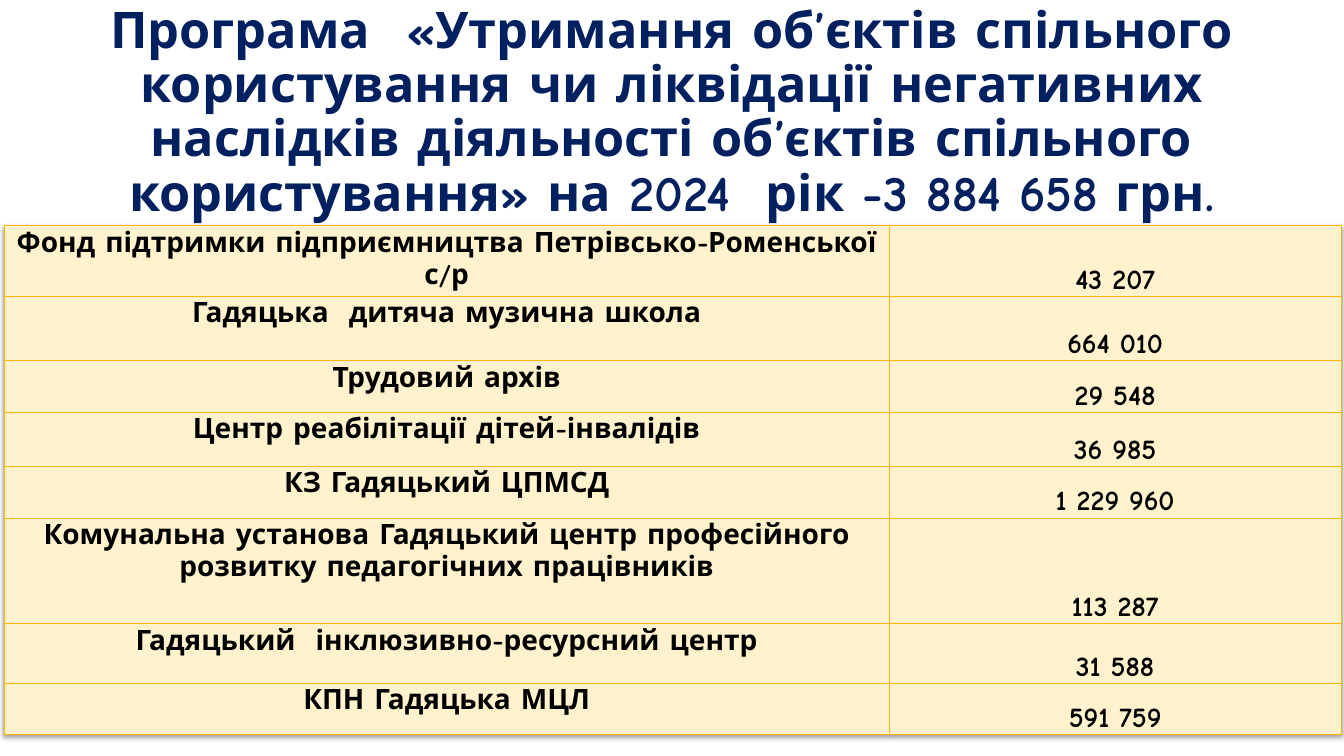
from lxml import etree
from pptx import Presentation
from pptx.dml.color import RGBColor
from pptx.enum.text import MSO_ANCHOR, PP_ALIGN
from pptx.oxml import parse_xml
from pptx.oxml.ns import qn
from pptx.util import Inches, Pt

CENTER = PP_ALIGN.CENTER
TOP, MIDDLE, BOTTOM = MSO_ANCHOR.TOP, MSO_ANCHOR.MIDDLE, MSO_ANCHOR.BOTTOM
FONT = "Comic Neue"
NAVY, BLACK, CREAM, GOLD = "002060", "000000", "FFF2CC", "FEB604"

TITLE = (
    "Програма  «Утримання об’єктів спільного користування чи ліквідації "
    "негативних наслідків діяльності об’єктів спільного користування» "
    "на 2024  рік -3 884 658 грн."
)
ROWS = [
    ("Фонд підтримки підприємництва Петрівсько-Роменської с/р", "43 207", 0.7),
    ("Гадяцька  дитяча музична школа", "664 010", 0.64),
    ("Трудовий архів", "29 548", 0.51),
    ("Центр реабілітації дітей-інвалідів", "36 985", 0.54),
    ("КЗ Гадяцький ЦПМСД", "1 229 960", 0.51),
    ("Комунальна установа Гадяцький центр професійного розвитку "
     "педагогічних працівників", "113 287", 1.05),
    ("Гадяцький  інклюзивно-ресурсний центр", "31 588", 0.59),
    ("КПН Гадяцька МЦЛ", "591 759", 0.51),
]
COLS = [8.78, 4.48]
SHADOW = (
    '<a:effectLst xmlns:a="http://schemas.openxmlformats.org/drawingml/2006/main">'
    '<a:outerShdw blurRad="40000" dist="20000" dir="5400000" rotWithShape="0">'
    '<a:srgbClr val="000000"><a:alpha val="38000"/></a:srgbClr>'
    '</a:outerShdw></a:effectLst>'
)


def paint(code):
    return RGBColor.from_string(code)


def write(frame, text, size, color):
    frame.text = text
    para = frame.paragraphs[0]
    para.alignment = CENTER
    font = para.runs[0].font
    font.name, font.size, font.bold = FONT, Pt(size), True
    font.color.rgb = paint(color)
    return para


def border(cell):
    props = cell._tc.get_or_add_tcPr()
    for side in ("a:lnL", "a:lnR", "a:lnT", "a:lnB"):
        line = etree.SubElement(props, qn(side), w=str(Pt(0.75)))
        fill = etree.SubElement(line, qn("a:solidFill"))
        etree.SubElement(fill, qn("a:srgbClr"), val=GOLD)


def style(cell, text, anchor):
    border(cell)
    cell.fill.solid()
    cell.fill.fore_color.rgb = paint(CREAM)
    cell.margin_left = cell.margin_right = cell.margin_top = Inches(0.01)
    cell.margin_bottom = 0
    cell.vertical_anchor = anchor
    write(cell.text_frame, text, 20, BLACK)


def main():
    deck = Presentation()
    deck.slide_width, deck.slide_height = Inches(13.33), Inches(7.5)
    slide = deck.slides.add_slide(deck.slide_layouts[5])

    title = slide.shapes.title
    title.left, title.top = 0, Inches(0.4)
    title.width, title.height = deck.slide_width, Inches(1.45)
    write(title.text_frame, TITLE, 36, NAVY).line_spacing = 0.9
    title.text_frame.vertical_anchor = MIDDLE

    high = sum(row[2] for row in ROWS)
    frame = slide.shapes.add_table(
        len(ROWS), len(COLS), Inches(0.04), Inches(2.24),
        Inches(sum(COLS)), Inches(high))
    table = frame.table
    table.first_row = table.horz_banding = False
    table._tbl.tblPr.insert(0, parse_xml(SHADOW))
    for col, width in zip(table.columns, COLS):
        col.width = Inches(width)
    for row, (name, value, height) in zip(table.rows, ROWS):
        row.height = Inches(height)
        style(row.cells[0], name, TOP)
        style(row.cells[1], value, BOTTOM)

    deck.save("out.pptx")


if __name__ == "__main__":
    main()
